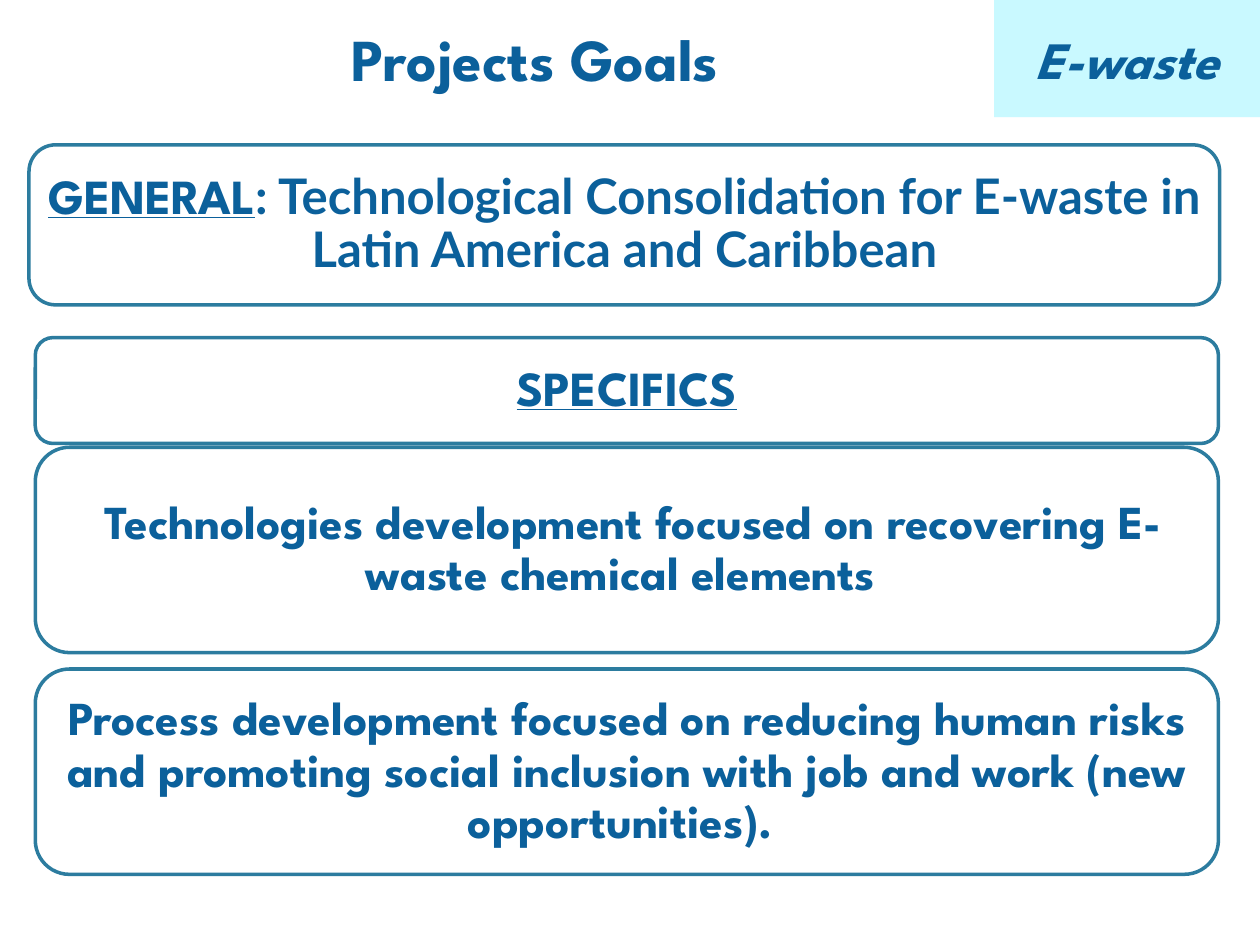
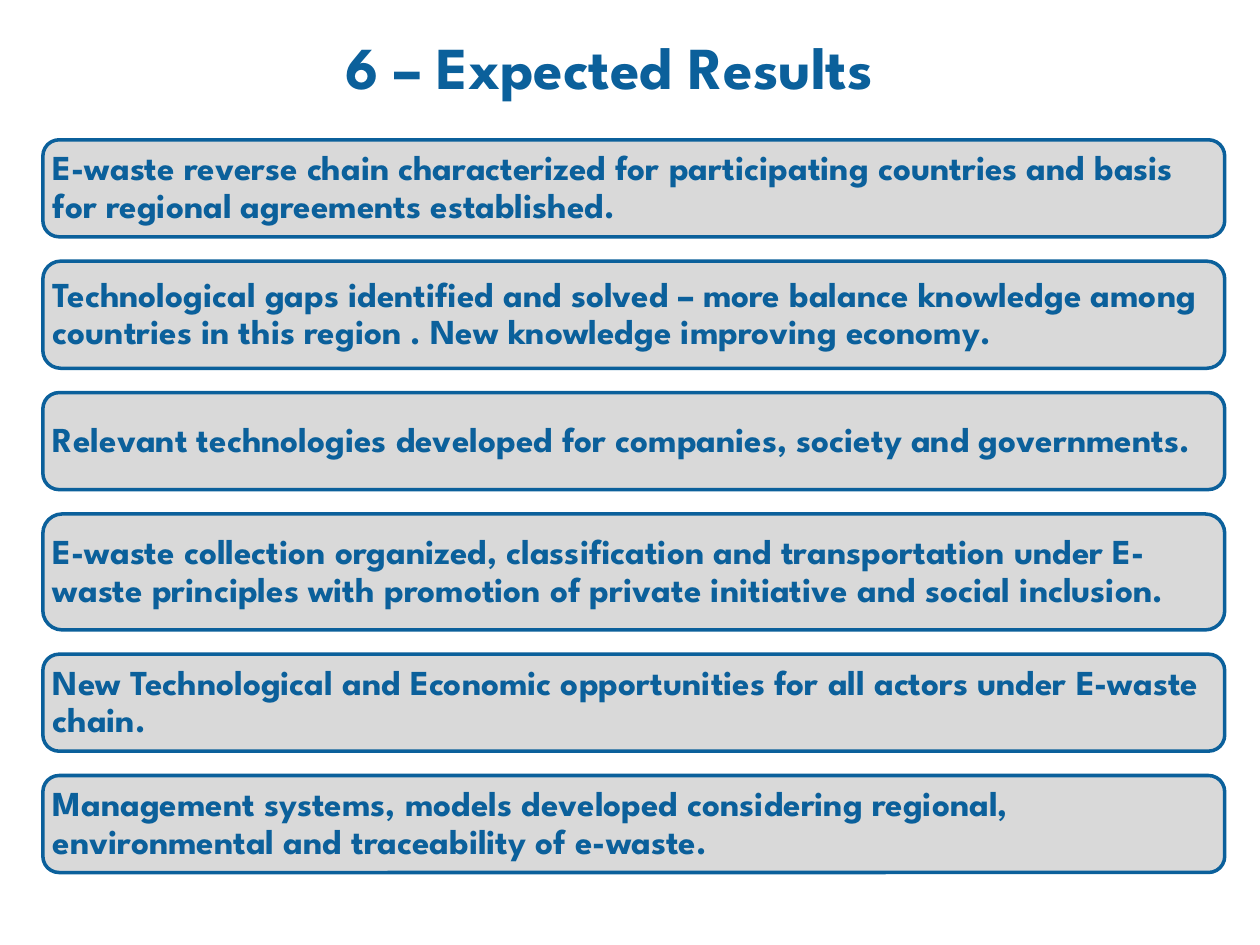
from lxml import etree
from pptx import Presentation
from pptx.dml.color import RGBColor
from pptx.enum.shapes import MSO_SHAPE
from pptx.enum.text import MSO_ANCHOR, PP_ALIGN
from pptx.oxml.ns import qn
from pptx.util import Inches, Pt

RECTANGLE, ROUNDED = MSO_SHAPE.RECTANGLE, MSO_SHAPE.ROUNDED_RECTANGLE
TOP, MIDDLE, BOTTOM = MSO_ANCHOR.TOP, MSO_ANCHOR.MIDDLE, MSO_ANCHOR.BOTTOM
LEFT, CENTER = PP_ALIGN.LEFT, PP_ALIGN.CENTER

BLUE = RGBColor(0x0B, 0x60, 0x9B)
TEAL = RGBColor(0x2C, 0x7C, 0x9F)
CYAN = RGBColor(0xA5, 0xF5, 0xFF)
GREY = RGBColor(0xD9, 0xD9, 0xD9)

HEADING_FONT, BODY_FONT = "League Spartan", "Lato"
COLUMNS, ROWS = 100, 75
CORNER_INSET = 0.05  # share of a rounded card's height taken by its corners


class SlideBuilder:
    """Draws the shared elements; lengths are grid columns and rows."""

    def __init__(self, deck):
        self.deck = deck
        self.column = deck.slide_width / COLUMNS
        self.row = deck.slide_height / ROWS
        self.page = None

    def new_page(self):
        self.page = self.deck.slides.add_slide(self.deck.slide_layouts[6])

    def place(self, left, top, width, height):
        return (int(left * self.column), int(top * self.row),
                int(width * self.column), int(height * self.row))

    def add_text(self, box, spans, size, align=CENTER, anchor=MIDDLE, spacing=1.0):
        """Fill a box with one paragraph of (text, font, underline) spans."""
        frame = box.text_frame
        frame.word_wrap = True
        frame.vertical_anchor = anchor
        para = frame.paragraphs[0]
        para.alignment = align
        para.line_spacing = spacing
        for text, font_name, underline in spans:
            span = para.add_run()
            span.text = text
            span.font.name = font_name
            span.font.size = Pt(size)
            span.font.bold = True
            span.font.underline = underline
            span.font.color.rgb = BLUE
        return para

    def title(self, text, area, anchor):
        box = self.page.shapes.add_textbox(*self.place(*area))
        self.add_text(box, [(text, HEADING_FONT, False)], 34, anchor=anchor)

    def tag(self, text, area):
        """Translucent corner label."""
        box = self.page.shapes.add_shape(RECTANGLE, *self.place(*area))
        box.shadow.inherit = False
        box.line.fill.background()
        box.fill.solid()
        box.fill.fore_color.rgb = CYAN
        color = box.element.find(f".//{qn('a:srgbClr')}")
        etree.SubElement(color, qn("a:alpha")).set("val", "60000")
        para = self.add_text(box, [(text, HEADING_FONT, False)], 30)
        para.runs[0].font.italic = True

    def card(self, spans, area, size, margin, line, fill=None, align=CENTER):
        """Rounded card; margin is the text's distance from the edge in inches."""
        box = self.page.shapes.add_shape(ROUNDED, *self.place(*area))
        box.shadow.inherit = False
        box.line.color.rgb = line
        box.line.width = Pt(2)
        if fill is None:
            box.fill.background()
        else:
            box.fill.solid()
            box.fill.fore_color.rgb = fill
        inset = Inches(margin) - int(CORNER_INSET * box.height)
        frame = box.text_frame
        frame.margin_left = frame.margin_right = inset
        frame.margin_top = frame.margin_bottom = inset
        self.add_text(box, spans, size, align, spacing=0.9)


def build_goals(builder):
    builder.new_page()

    # General goal
    builder.card([("GENERAL", HEADING_FONT, True),
                  (": Technological Consolidation for E-waste in Latin America "
                   "and Caribbean", BODY_FONT, False)],
                 (2.3, 11.5, 94.5, 12.7), 28, 0.12, TEAL)

    # Specific goals
    left, width = 2.8, 93.9
    builder.card([("SPECIFICS", HEADING_FONT, True)],
                 (left, 26.8, width, 8.4), 28, 0.12, TEAL)
    goals = [
        " Technologies development focused on recovering E-waste chemical elements ",
        "Process development focused on reducing human risks and promoting "
        "social inclusion with job and work (new opportunities). ",
    ]
    for index, goal in enumerate(goals):
        builder.card([(goal, HEADING_FONT, False)],
                     (left, 35.5 + index * 17.6, width, 16.3), 27, 0.11, TEAL)

    # Title and corner label
    builder.title("Projects Goals ", (12.2, 1.6, 61.8, 6.3), BOTTOM)
    builder.tag("E-waste", (78.9, 0, 21.1, 9.3))


def build_results(builder):
    builder.new_page()

    # Result cards, stacked with equal gaps
    results = [
        ("E-waste reverse chain characterized for participating countries and "
         "basis for regional agreements established.", 7.7),
        ("Technological gaps identified and solved – more balance knowledge among "
         "countries in this region . New knowledge improving economy.", 8.5),
        ("Relevant technologies developed for companies, society and "
         "governments.", 7.7),
        ("E-waste collection organized, classification and transportation under "
         "E-waste principles with promotion of private initiative and social "
         "inclusion.", 9.2),
        ("New Technological and Economic opportunities for all actors under "
         "E-waste chain.", 7.7),
        ("Management systems, models developed considering regional, "
         "environmental and traceability of e-waste.", 7.7),
    ]
    top, gap = 11.1, 1.93
    for result, height in results:
        builder.card([(result, HEADING_FONT, False)], (3.4, top, 93.8, height),
                     20, 0.08, BLUE, GREY, LEFT)
        top += height + gap

    # Title
    builder.title("6 – Expected Results", (10.6, 1.9, 75.5, 6.7), TOP)


def main():
    deck = Presentation()
    deck.slide_width, deck.slide_height = Inches(10), Inches(7.5)
    builder = SlideBuilder(deck)
    build_goals(builder)
    build_results(builder)
    deck.save("out.pptx")


if __name__ == "__main__":
    main()
